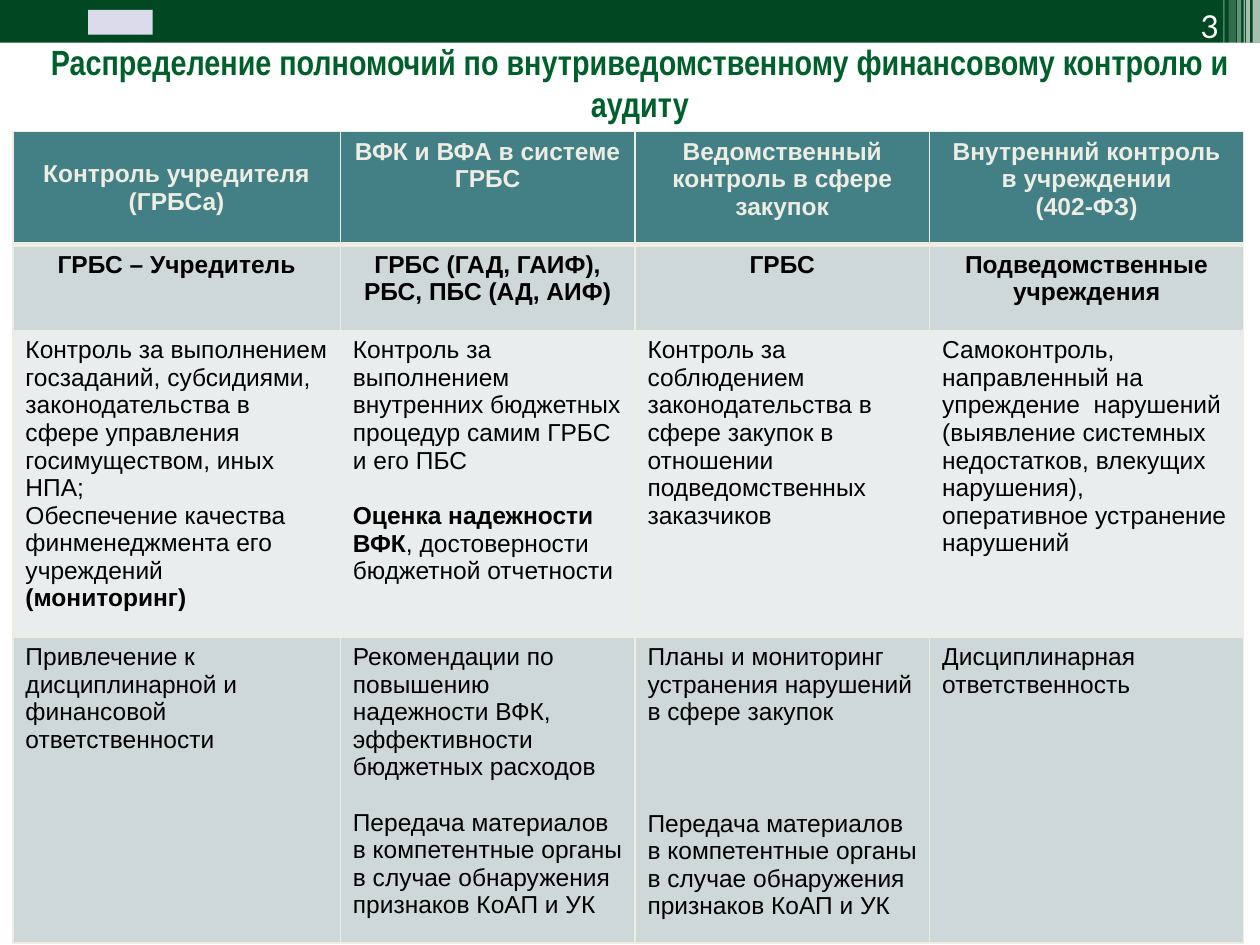
from lxml import etree
from pptx import Presentation
from pptx.dml.color import RGBColor
from pptx.enum.shapes import MSO_SHAPE
from pptx.enum.text import MSO_ANCHOR as ANCHOR, PP_ALIGN as ALIGN
from pptx.oxml import parse_xml
from pptx.oxml.ns import nsdecls, qn
from pptx.util import Cm, Pt

DARK_GREEN = RGBColor(0x00, 0x48, 0x21)
TITLE_GREEN = RGBColor(0x00, 0x60, 0x2B)
TEAL = RGBColor(0x43, 0x80, 0x86)
GREY = RGBColor(0xCF, 0xD8, 0xD9)
LIGHT_GREY = RGBColor(0xE9, 0xED, 0xED)
CREAM = RGBColor(0xED, 0xED, 0xE3)
LILAC = RGBColor(0xDB, 0xDB, 0xE9)
WHITE = RGBColor(0xFF, 0xFF, 0xFF)
BLACK = RGBColor(0x00, 0x00, 0x00)


def write(frame, text, font="Arial", size=14, color=BLACK, bold=False,
          align=ALIGN.LEFT, anchor=ANCHOR.TOP):
    """Fill a frame: one paragraph per line; *asterisks* enclose bold runs."""
    frame.word_wrap = True
    frame.vertical_anchor = anchor
    for i, line in enumerate(text.split("\n")):
        paragraph = frame.add_paragraph() if i else frame.paragraphs[0]
        paragraph.alignment = align
        for j, part in enumerate(line.split("*")):
            if part:
                run = paragraph.add_run()
                run.text = part
                run.font.name = font
                run.font.size = Pt(size)
                run.font.color.rgb = color
                run.font.bold = bold or j % 2 == 1


def add_block(left, top, width, height, color, opacity=100):
    block = slide.shapes.add_shape(MSO_SHAPE.RECTANGLE, Cm(left), Cm(top), Cm(width), Cm(height))
    block.shadow.inherit = False
    block.line.fill.background()
    block.fill.solid()
    block.fill.fore_color.rgb = color
    if opacity < 100:
        tint = block.fill._xPr.find(".//" + qn("a:srgbClr"))
        etree.SubElement(tint, qn("a:alpha"), val=str(opacity * 1000))


prs = Presentation()
prs.slide_width, prs.slide_height = Cm(25.4), Cm(19.05)
slide = prs.slides.add_slide(prs.slide_layouts[6])

# Top band with stripes: left, width, height, opacity
add_block(0, 0, 25.4, 0.86, DARK_GREEN)
for left, width, height, opacity in [
    (25.25, 0.15, 0.86, 65), (25.12, 0.08, 0.86, 65), (25.07, 0.03, 0.86, 60),
    (24.94, 0.08, 0.86, 40), (24.77, 0.15, 0.91, 20), (24.66, 0.03, 0.91, 30),
]:
    add_block(left, 0, width, height, WHITE, opacity)
add_block(1.78, 0.2, 1.3, 0.5, LILAC)  # emblem

page_number = slide.shapes.add_textbox(Cm(22.7), Cm(0), Cm(2.12), Cm(1.02))
write(page_number.text_frame, "3", font="Lato", size=18, color=WHITE,
      align=ALIGN.RIGHT, anchor=ANCHOR.BOTTOM)

title = slide.shapes.add_textbox(Cm(0.4), Cm(0.86), Cm(25), Cm(1.62))
write(title.text_frame,
      "Распределение полномочий по внутриведомственному финансовому контролю и аудиту",
      font="Arial Narrow", size=20, color=TITLE_GREEN, bold=True,
      align=ALIGN.CENTER, anchor=ANCHOR.MIDDLE)

# Table
referral = "Передача материалов в компетентные органы в случае обнаружения признаков КоАП и УК"
rows = [
    ["Контроль учредителя\n(ГРБСа)",
     "ВФК и ВФА в системе ГРБС",
     "Ведомственный\nконтроль в сфере закупок",
     "Внутренний контроль в учреждении\n(402-ФЗ)"],
    ["ГРБС – Учредитель",
     "ГРБС (ГАД, ГАИФ), РБС, ПБС (АД, АИФ)",
     "ГРБС",
     "Подведомственные\nучреждения"],
    ["Контроль за выполнением госзаданий, субсидиями, законодательства в сфере "
     "управления госимуществом, иных НПА;\n"
     "Обеспечение качества финменеджмента его учреждений *(мониторинг)*",
     "Контроль за выполнением внутренних бюджетных процедур самим ГРБС и его ПБС\n"
     "*Оценка надежности*\n*ВФК*, достоверности бюджетной отчетности",
     "Контроль за соблюдением законодательства в сфере закупок в отношении "
     "подведомственных заказчиков",
     "Самоконтроль, направленный на упреждение  нарушений (выявление системных "
     "недостатков, влекущих нарушения), оперативное устранение нарушений"],
    ["Привлечение к дисциплинарной и финансовой ответственности",
     "Рекомендации по повышению надежности ВФК, эффективности бюджетных расходов\n" + referral,
     "Планы и мониторинг устранения нарушений в сфере закупок\n" + referral,
     "Дисциплинарная ответственность"],
]
column_widths = [6.6, 5.94, 5.94, 6.33]
row_heights = [2.28, 1.73, 6.17, 6.17]
row_fills = [TEAL, GREY, LIGHT_GREY, GREY]

table = slide.shapes.add_table(
    len(rows), len(column_widths), Cm(0.26), Cm(2.65),
    Cm(sum(column_widths)), Cm(sum(row_heights))).table
for column, width in zip(table.columns, column_widths):
    column.width = Cm(width)

for r, (texts, height, row_fill) in enumerate(zip(rows, row_heights, row_fills)):
    table.rows[r].height = Cm(height)
    for c, text in enumerate(texts):
        cell = table.cell(r, c)
        properties = cell._tc.get_or_add_tcPr()
        for side in "LRTB":
            under_header = (r, side) in [(0, "B"), (1, "T")]
            border_width = Pt(3 if under_header else 1)
            properties.append(parse_xml(
                f'<a:ln{side} {nsdecls("a")} w="{border_width}"><a:solidFill>'
                f'<a:srgbClr val="{CREAM}"/></a:solidFill></a:ln{side}>'))
        cell.fill.solid()
        cell.fill.fore_color.rgb = row_fill
        write(cell.text_frame, text, color=CREAM if r == 0 else BLACK, bold=r < 2,
              align=ALIGN.CENTER if r < 2 else ALIGN.LEFT)
table.cell(0, 0).vertical_anchor = ANCHOR.MIDDLE

# Gaps before the second paragraph: row, column, points
for r, c, gap in [(2, 1, 16), (3, 1, 16), (3, 2, 48)]:
    table.cell(r, c).text_frame.paragraphs[1].space_before = Pt(gap)

prs.save("out.pptx")
